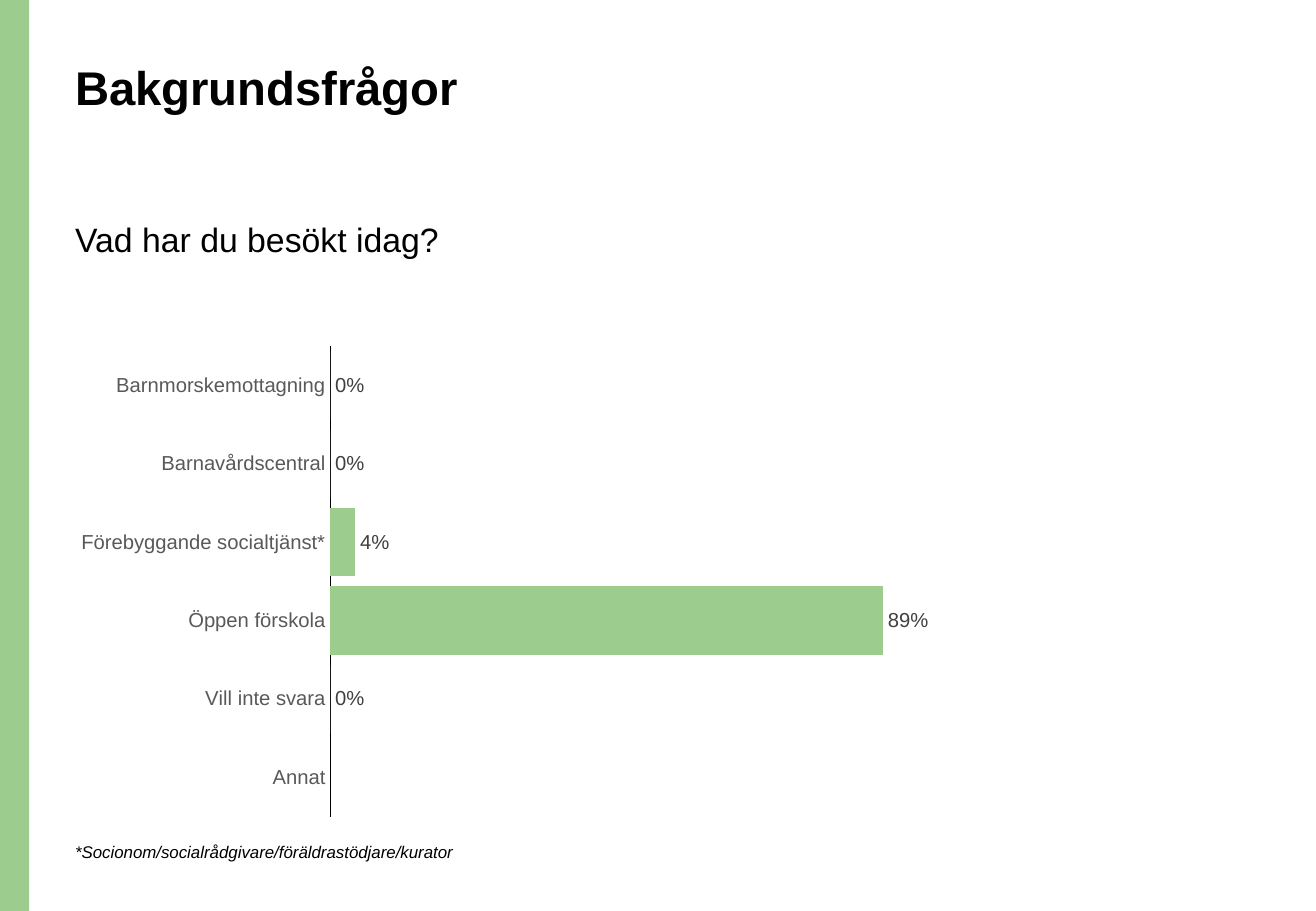
from pptx import Presentation
from pptx import util as u
from pptx.chart import data as chart_data
from pptx.dml.color import RGBColor
from pptx.enum import chart as ch, shapes, text

GREEN = RGBColor(0x9D, 0xCC, 0x8F)
BLACK = RGBColor(0, 0, 0)
DARK_GREY = RGBColor(0x40, 0x40, 0x40)
GREY = RGBColor(0x59, 0x59, 0x59)
FONT = "Arial"

HEADING = "Bakgrundsfrågor"
QUESTION = "Vad har du besökt idag?"
FOOTNOTE = "*Socionom/socialrådgivare/föräldrastödjare/kurator"
VISITS = [
    ("Barnmorskemottagning", 0),
    ("Barnavårdscentral", 0),
    ("Förebyggande socialtjänst*", 0.04),
    ("Öppen förskola", 0.89),
    ("Vill inte svara", 0),
    ("Annat", None),
]

WIDTH, HEIGHT = u.Cm(27.51), u.Cm(19.05)
LEFT = u.Cm(1.32)


def set_font(font, size, color):
    font.name = FONT
    font.size = u.Pt(size)
    font.color.rgb = color


def add_text(slide, words, top, width, height, size,
             bold=False, italic=False, spacing=1.0):
    box = slide.shapes.add_textbox(LEFT, u.Cm(top), u.Cm(width), u.Cm(height))
    frame = box.text_frame
    frame.word_wrap = True
    frame.vertical_anchor = text.MSO_ANCHOR.TOP
    paragraph = frame.paragraphs[0]
    paragraph.line_spacing = spacing
    run = paragraph.add_run()
    run.text = words
    set_font(run.font, size, BLACK)
    run.font.bold = bold
    run.font.italic = italic


def add_visits(slide):
    visits = chart_data.CategoryChartData(number_format="0%")
    visits.categories = [place for place, share in VISITS]
    visits.add_series("Series 1", [share for place, share in VISITS])
    chart = slide.shapes.add_chart(
        ch.XL_CHART_TYPE.BAR_CLUSTERED, LEFT, u.Cm(7.04),
        u.Cm(18.95), u.Cm(10.24), visits).chart
    chart.has_legend = False
    chart.has_title = False
    set_font(chart.font, 10, BLACK)

    places = chart.category_axis
    places.reverse_order = True
    places.has_major_gridlines = False
    places.major_tick_mark = ch.XL_TICK_MARK.NONE
    places.minor_tick_mark = ch.XL_TICK_MARK.NONE
    places.format.line.color.rgb = BLACK
    places.format.line.width = u.Pt(0.75)
    set_font(places.tick_labels.font, 12, GREY)

    shares = chart.value_axis
    shares.minimum_scale = 0
    shares.maximum_scale = 1
    shares.has_major_gridlines = False
    shares.visible = False

    bars = chart.plots[0]
    bars.gap_width = 15
    bars.vary_by_categories = False
    bars.series[0].format.fill.solid()
    bars.series[0].format.fill.fore_color.rgb = GREEN
    labels = bars.series[0].data_labels
    labels.show_value = True
    labels.position = ch.XL_LABEL_POSITION.OUTSIDE_END
    labels.number_format = "0%"
    labels.number_format_is_linked = False
    set_font(labels.font, 12, DARK_GREY)


def main():
    deck = Presentation()
    deck.slide_width, deck.slide_height = WIDTH, HEIGHT
    slide = deck.slides.add_slide(deck.slide_layouts[6])

    side_band = slide.shapes.add_shape(
        shapes.MSO_SHAPE.RECTANGLE, 0, 0, u.Cm(0.61), HEIGHT)
    side_band.shadow.inherit = False
    side_band.fill.solid()
    side_band.fill.fore_color.rgb = GREEN
    side_band.line.fill.background()

    add_text(slide, HEADING, 1.22, 23.72, 2.59, 28, bold=True, spacing=0.9)
    add_text(slide, QUESTION, 4.55, 16.51, 1.88, 20, spacing=0.9)
    add_visits(slide)
    add_text(slide, FOOTNOTE, 17.48, 13.77, 0.69, 10, italic=True)

    deck.save("out.pptx")


if __name__ == "__main__":
    main()
